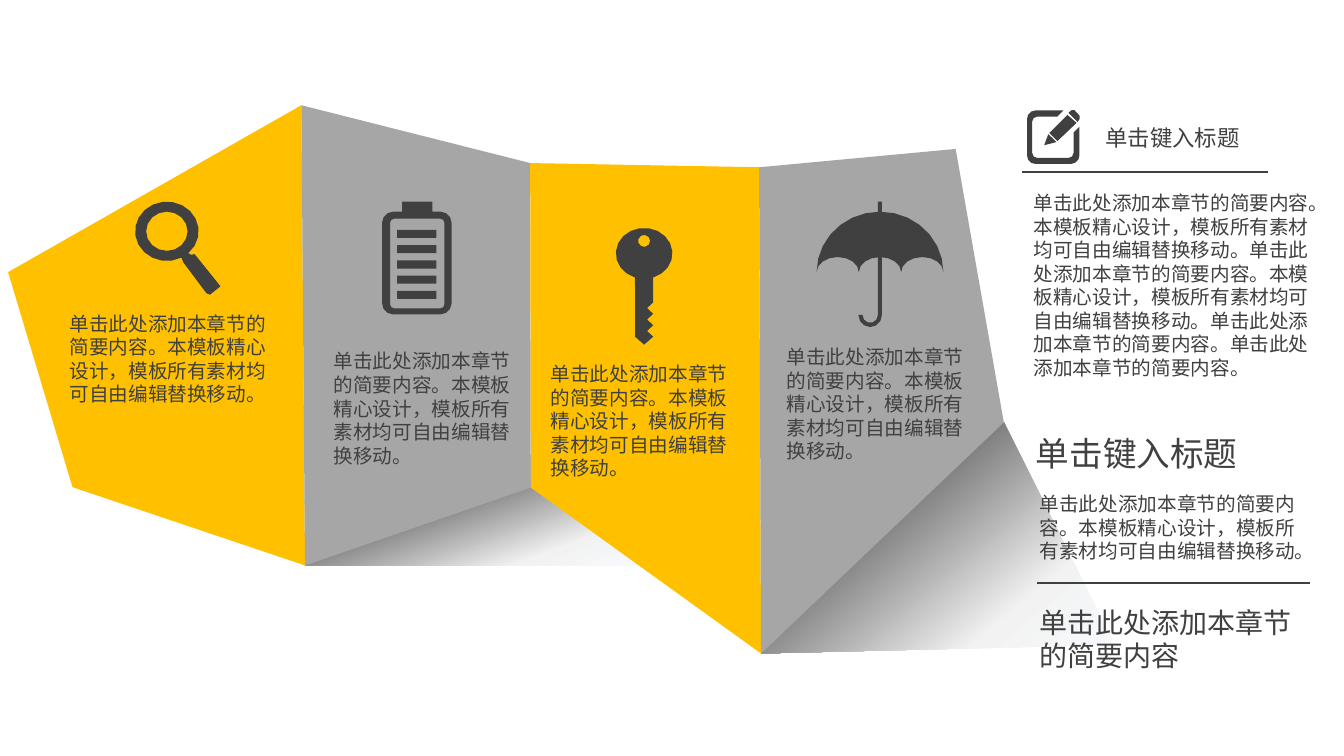
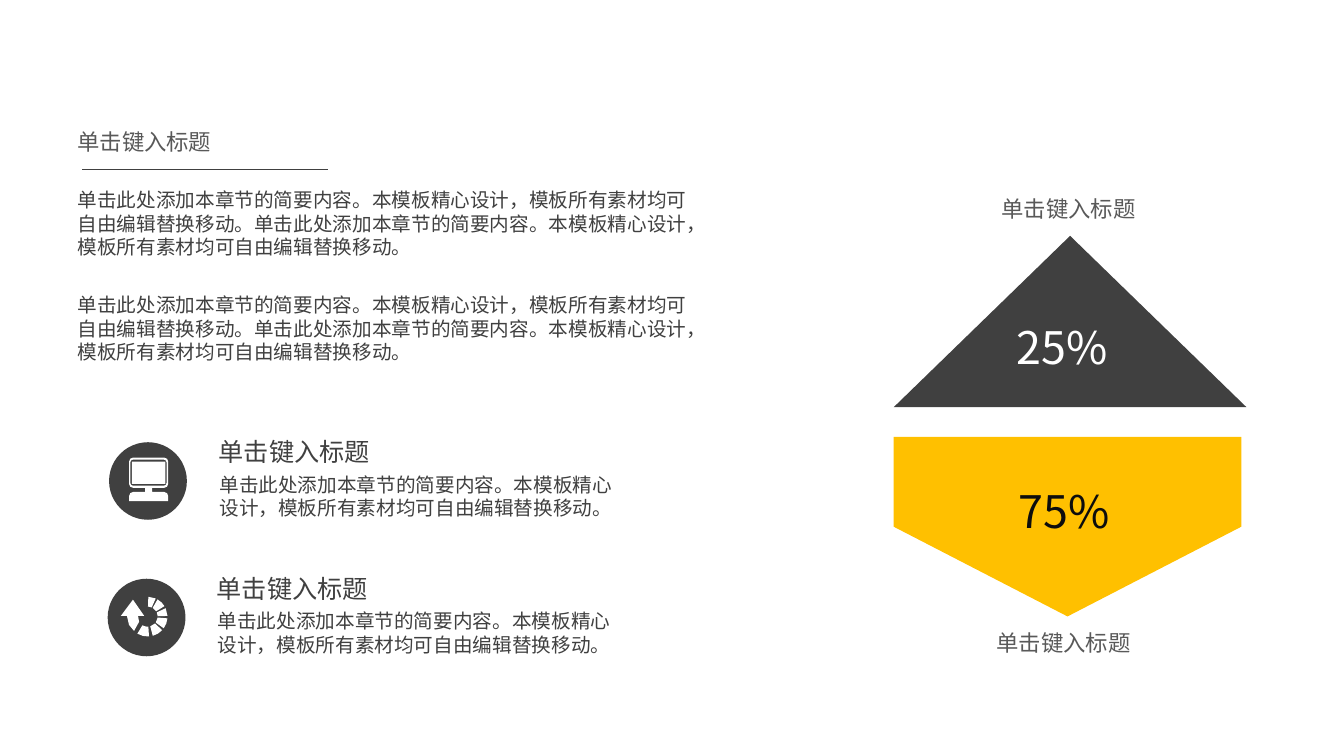
from copy import deepcopy
from dataclasses import dataclass
from itertools import pairwise
from math import ceil, cos, radians, sin, sqrt

from lxml import etree
from pptx import Presentation
from pptx import util as u
from pptx.dml import color
from pptx.enum import shapes, text
from pptx.oxml import ns

Point = tuple[float, float]
Loop = list[Point]

HUES = {
    "dark": "404040", "mid": "595959", "gray": "A6A6A6", "gold": "FFC000",
    "white": "FFFFFF", "ink": "0D0D0D", "deep": "262626",
    "pale": "F7FAFD", "mist": "F2F2F2",
}
FONT = "Noto Sans CJK SC"
PITCH = 1.2
HEAD = "单击键入标题"
FIRST = "单击此处添加本章节的简要内容"
BODY = FIRST + "。本模板精心设计，模板所有素材均可自由编辑替换移动。"


@dataclass
class Note:
    words: list[str]
    left: float
    top: float
    width: float
    size: float = 14
    hue: str = "dark"
    lines: int = 1
    mid: bool = False
    gap: float = 0


@dataclass
class Rule:
    left: float
    right: float
    top: float


@dataclass
class Shade:
    loop: Loop
    dark: str
    turn: float


@dataclass
class Item:
    left: float
    top: float
    inset: float
    icon: list[Loop]


def rgb(hue: str) -> color.RGBColor:
    return color.RGBColor.from_string(HUES[hue])


def apply(thing, form: dict) -> None:
    for key, value in form.items():
        setattr(thing, key, value)


def arc(x: float, y: float, rx: float, ry: float, start: float, end: float) -> Loop:
    steps = ceil(abs(end - start) * sqrt(rx) / 90)
    turns = [radians(start + (end - start) * i / max(steps, 1)) for i in range(steps + 1)]
    return [(x + rx * cos(t), y + ry * sin(t)) for t in turns]


def oval(x: float, y: float, rx: float, ry: float) -> Loop:
    return arc(x, y, rx, ry, 0, 360)


def box(x: float, y: float, w: float, h: float, r: float = 0) -> Loop:
    ends = [(x + w - r, y + h - r), (x + r, y + h - r), (x + r, y + r), (x + w - r, y + r)]
    return [p for i, (cx, cy) in enumerate(ends) for p in arc(cx, cy, r, r, 90 * i, 90 * i + 90)]


def wedge(start: float, end: float) -> Loop:
    return arc(105.5, 440.5, 14.2, 14.2, start, end) + arc(105.5, 440.5, 7.2, 7.2, end, start)


def paint(shape, hue: str) -> None:
    shape.shadow.inherit = False
    shape.fill.solid()
    shape.fill.fore_color.rgb = rgb(hue)
    shape.line.fill.background()


def trace(slide, loops: list[Loop], hue: str = "dark"):
    first, *rest = [[(u.Pt(x), u.Pt(y)) for x, y in loop] for loop in loops]
    pen = slide.shapes.build_freeform(*first[0], scale=1.0)
    pen.add_line_segments(first[1:], close=True)
    for loop in rest:
        pen.move_to(*loop[0])
        pen.add_line_segments(loop[1:], close=True)
    shape = pen.convert_to_shape()
    paint(shape, hue)
    return shape


def cast(slide, shade: Shade) -> None:
    shape = trace(slide, [shade.loop])
    shape.fill.gradient()
    shape.fill.gradient_angle = 360 - shade.turn
    stops = shape._element.spPr.find(".//" + ns.qn("a:gsLst"))
    stops.append(deepcopy(stops[0]))
    tints = [(0, "pale"), (0.24, "mist"), (0.91, shade.dark)]
    for stop, (place, hue) in zip(shape.fill.gradient_stops, tints):
        stop.color.rgb = rgb(hue)
        stop.position = place


def write(slide, note: Note) -> None:
    high = note.lines * note.size * PITCH + 7.2 + note.gap
    frame = slide.shapes.add_textbox(*map(u.Pt, (note.left, note.top, note.width, high))).text_frame
    apply(frame, {"word_wrap": True, "auto_size": text.MSO_AUTO_SIZE.SHAPE_TO_FIT_TEXT})
    for i, words in enumerate(note.words):
        para = frame.add_paragraph() if i else frame.paragraphs[0]
        if i:
            para.space_before = u.Pt(note.gap)
        if note.mid:
            para.alignment = text.PP_ALIGN.CENTER
        run = para.add_run()
        run.text = words
        apply(run.font, {"name": FONT, "size": u.Pt(note.size)})
        run.font.color.rgb = rgb(note.hue)
        etree.SubElement(run._r.get_or_add_rPr(), ns.qn("a:ea"), typeface=FONT)


def rule(slide, bar: Rule) -> None:
    line = slide.shapes.add_connector(
        shapes.MSO_CONNECTOR.STRAIGHT, *map(u.Pt, (bar.left, bar.top, bar.right, bar.top)))
    line.line.color.rgb = rgb("dark")
    line.line.width = u.Pt(1.25)
    etree.SubElement(line._element.spPr, ns.qn("a:effectLst"))


def preset(slide, kind, left: float, top: float, width: float, height: float, hue: str, turn: float = 0) -> None:
    shape = slide.shapes.add_shape(kind, *map(u.Pt, (left, top, width, height)))
    shape.rotation = turn
    paint(shape, hue)


LENS = [
    arc(119.2, 165.2, 22.7, 21.2, 62.7, 407.6)
    + [(136.5, 182), (139, 181.5), (157.5, 204.5), (150, 210.5), (147.5, 209.5), (131, 187.5)],
    oval(119.2, 165.2, 14.8, 14),
]
POWER = [
    box(272.9, 151.2, 49.7, 73.4, 8), box(278.6, 156.2, 38.9, 64.1, 3),
    box(287.3, 144, 21.6, 7.2),
    *[box(283.7, 164.2 + 10.9 * i, 28, 5.8) for i in range(5)],
]
TEETH = [(462.2 if i % 2 else 466.6, 216 + 4.08 * i) for i in range(7)]
KEY = [
    arc(460.1, 181, 20.2, 18.2, 108.8, 431.2) + TEETH + [(460.1, 246.2), (453.6, 240.5)],
    oval(460.1, 172.1, 4.3, 4.3),
]
SHADE = [
    arc(628.6, 194.4, 45.3, 43.2, 180, 360)
    + [p for i in (1, 0, -1) for p in arc(628.6 + 30.2 * i, 194.4, 15.1, 10.8, 0, -180)],
    box(627.1, 144, 2.9, 7.2), box(627.1, 183.6, 2.9, 41.4),
    arc(621.6, 225, 8.4, 8.6, 0, 180) + arc(621.6, 225, 5.5, 5.6, 180, 0),
]
EDIT = [
    arc(739.6, 84.9, 6, 6, 270, 180) + arc(739.6, 111.1, 6, 6, 180, 90)
    + arc(765, 111.1, 6, 6, 90, 0) + [(771, 90.5), (766.8, 94.8)]
    + arc(763.3, 109.3, 3.5, 3.5, 0, 90) + arc(740.8, 109.3, 3.5, 3.5, 90, 180)
    + arc(740.8, 86.8, 3.5, 3.5, 180, 270) + [(755.3, 83.3), (759.6, 78.9)],
    [(771.1, 85), (769.7, 87.1), (763.2, 80.6), (765.4, 78.7), (767.5, 78.7), (771.1, 82.6)],
    [(755.3, 100.8), (749.5, 95), (762.5, 82.1), (769, 87.8)],
    [(754.6, 101.5), (745.9, 103.7), (748.8, 95.8)],
]
SCREEN = [
    box(92.2, 326.9, 28, 21.6, 2.9), box(93.1, 328.3, 25.9, 18.7, 2), box(94.3, 329.8, 23.8, 15.8),
    box(103.7, 348.5, 5, 2.9),
    arc(95.2, 354.4, 3, 3, 180, 270) + arc(117.2, 354.4, 3, 3, 270, 360) + [(120.2, 357.9), (92.2, 357.9)],
]
SPANS = [(-88, -66), (-60, -32), (-25, -2), (5, 36), (43, 75), (86, 121)]
CYCLE = [
    *[wedge(*span) for span in SPANS],
    [(86.4, 439.9), (95, 428.4), (103, 439.9), (98.6, 439.9),
     (99.4, 444.2), (95.8, 450.7), (92.2, 446.4), (90.7, 439.9)],
]

TOPS: Loop = [(5.8, 194.4), (215.3, 75.2), (378.7, 116.5), (542.2, 119.5), (682.6, 106.4)]
FEET: Loop = [(51.8, 348), (217.9, 403.9), (379.2, 348.3), (543.6, 466.8), (717, 301.7)]


def fold(slide) -> None:
    cast(slide, Shade([FEET[1], FEET[2], (460.8, 404.4)], "dark", 250))
    cast(slide, Shade([FEET[3], FEET[4], (796.3, 460.8)], "deep", 230))
    for i, ((a, b), (c, d)) in enumerate(zip(pairwise(TOPS), pairwise(FEET))):
        trace(slide, [[a, b, d, c]], "gray" if i % 2 else "gold")
    for icon in (LENS, POWER, KEY, SHADE, EDIT):
        trace(slide, icon)
    for note in (
        Note([BODY], 42.6, 219, 160, lines=4),
        Note([BODY], 231.3, 246, 146, lines=5),
        Note([BODY], 386.3, 255, 146, lines=5),
        Note([BODY], 554.8, 243, 146, lines=5),
        Note([HEAD], 782.6, 85, 157, 16),
        Note([BODY * 2 + (FIRST + "。") * 2], 731.3, 133, 216, lines=8),
        Note([HEAD], 732.8, 306, 190, 24),
        Note([BODY], 735.6, 348, 201, lines=3),
        Note([FIRST], 735.4, 428.6, 204.5, 20, lines=2),
    ):
        write(slide, note)
    for bar in (Rule(730, 905.8, 123.1), Rule(740.4, 936, 416.6)):
        rule(slide, bar)


def share(slide) -> None:
    rule(slide, Rule(58.7, 234.4, 121))
    for item in (Item(77.9, 315.9, 71.2, SCREEN), Item(76.9, 413.4, 70.9, CYCLE)):
        preset(slide, shapes.MSO_SHAPE.OVAL, item.left, item.top, 55.6, 55.4, "dark")
        trace(slide, item.icon, "white")
        write(slide, Note([HEAD], item.left + item.inset, item.top - 7.6, 160, 18))
        write(slide, Note([BODY], item.left + item.inset + 0.6, item.top + 18.2, 299, lines=2))
    preset(slide, shapes.MSO_SHAPE.ISOSCELES_TRIANGLE, 638.4, 168.5, 252, 122.4, "dark")
    preset(slide, shapes.MSO_SHAPE.PENTAGON, 698.4, 252, 128.2, 248.4, "gold", 90)
    for note in (
        Note([HEAD], 48.2, 87.8, 157, 16, "mid"),
        Note([BODY * 2] * 2, 48.4, 131, 454, lines=6, gap=24.5),
        Note(["25%"], 703.4, 224.6, 110.2, 32, "white", mid=True),
        Note(["75%"], 704.9, 342, 110.2, 32, "ink", mid=True),
        Note([HEAD], 708.4, 136, 157, 16, "mid"),
        Note([HEAD], 704.8, 446, 157, 16, "mid"),
    ):
        write(slide, note)


def main() -> None:
    deck = Presentation()
    apply(deck, {"slide_width": u.Pt(960), "slide_height": u.Pt(540)})
    for build in (fold, share):
        build(deck.slides.add_slide(deck.slide_layouts[6]))
    deck.save("out.pptx")


if __name__ == "__main__":
    main()
